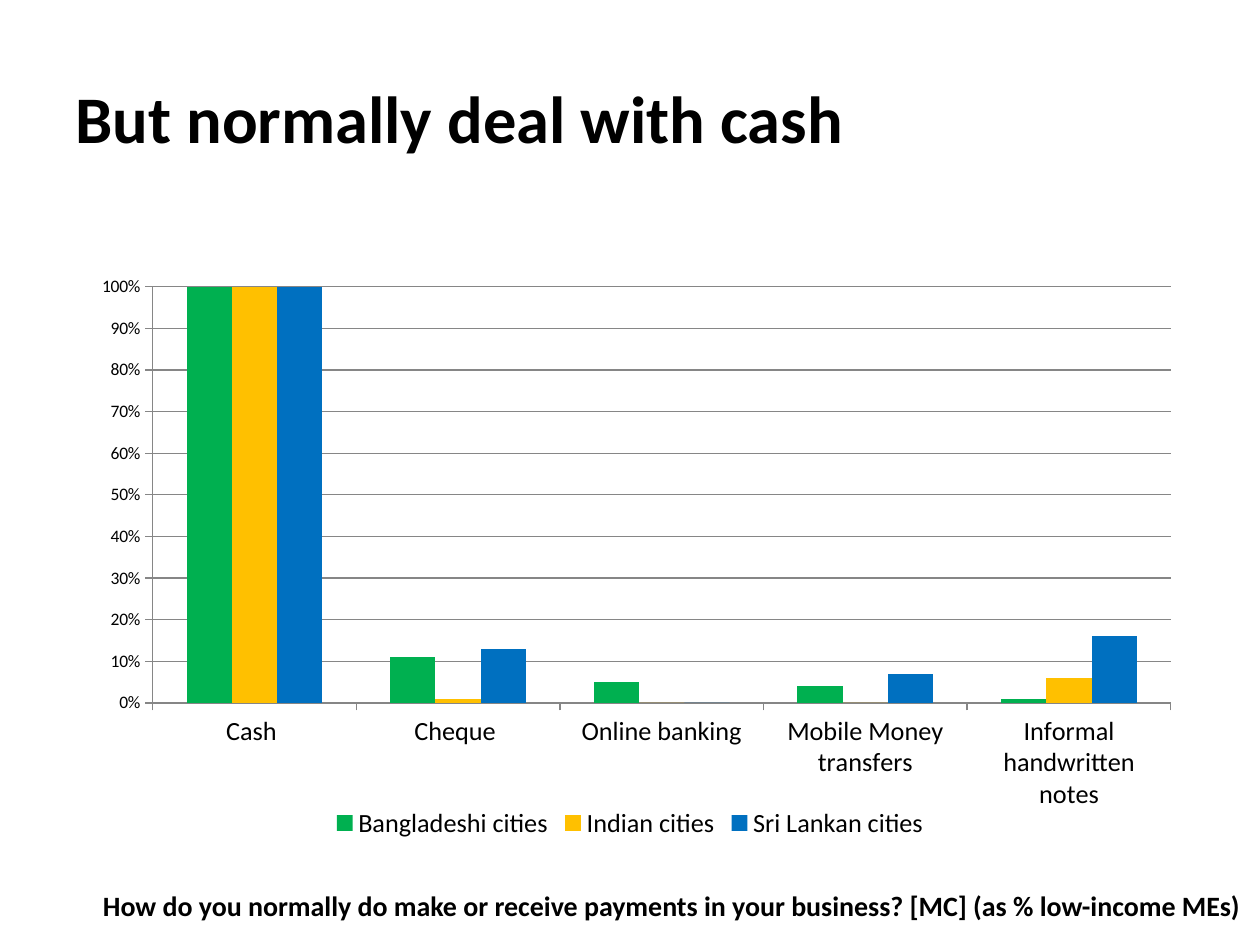
from lxml import etree
from pptx import Presentation
from pptx import util as u
from pptx.chart.data import CategoryChartData
from pptx.dml.color import RGBColor
from pptx.enum import chart as ch, text
from pptx.oxml import ns

PX = 914400 / 126
BLACK, GREY = "000000", "868686"
METHODS = ["Cash ", "Cheque ", "Online banking", "Mobile Money transfers",
           "Informal handwritten notes"]
CITIES = [
    ("Bangladeshi cities", "00B050", (1, 0.11, 0.05, 0.04, 0.01)),
    ("Indian cities", "FFC000", (1, 0.01, 0, 0, 0.06)),
    ("Sri Lankan cities", "0070C0", (1, 0.13, 0, 0.07, 0.16)),
]
PLOT = {"x": 0.079, "y": 0.107, "w": 0.898, "h": 0.667}


def px(*lengths):
    return [u.Emu(round(n * PX)) for n in lengths]


def rgb(code):
    return RGBColor.from_string(code)


class Deck:
    """Holds the style and the current slide."""

    font = "Calibri"

    def __init__(self, width, height):
        self.prs = Presentation()
        self.prs.slide_width, self.prs.slide_height = px(width, height)
        self.slide = self.prs.slides.add_slide(self.prs.slide_layouts[6])

    def style(self, font, size, bold=False):
        font.name, font.size, font.bold = self.font, u.Pt(size), bold
        font.color.rgb = rgb(BLACK)

    def label(self, box, words, size, align, anchor):
        frame = self.slide.shapes.add_textbox(*px(*box)).text_frame
        frame.word_wrap, frame.vertical_anchor = True, anchor
        line = frame.paragraphs[0]
        line.alignment = align
        run = line.add_run()
        run.text = words
        self.style(run.font, size, bold=True)

    def columns(self, box, categories, series, plot_box):
        data = CategoryChartData(number_format="0%")
        data.categories = categories
        for name, _, shares in series:
            data.add_series(name, shares)
        chart = self.slide.shapes.add_chart(
            ch.XL_CHART_TYPE.COLUMN_CLUSTERED, *px(*box), data).chart
        chart.has_title = False
        self.style(chart.font, 10)
        self.legend(chart)
        self.axes(chart)
        plot = chart.plots[0]
        plot.gap_width, plot.overlap, plot.vary_by_categories = 150, 0, False
        for bars, (_, color, _) in zip(plot.series, series):
            bars.format.fill.solid()
            bars.format.fill.fore_color.rgb = rgb(color)
        self.place_plot(chart, plot_box)

    def legend(self, chart):
        chart.has_legend = True
        chart.legend.position = ch.XL_LEGEND_POSITION.BOTTOM
        chart.legend.include_in_layout = False
        self.style(chart.legend.font, 15)

    def axes(self, chart):
        shares, methods = chart.value_axis, chart.category_axis
        shares.minimum_scale, shares.maximum_scale = 0, 1
        shares.major_unit = 0.1
        shares.has_major_gridlines = True
        shares.tick_labels.number_format = "0%"
        shares.tick_labels.number_format_is_linked = False
        for axis, size in ((shares, 10), (methods, 15)):
            axis.major_tick_mark = ch.XL_TICK_MARK.OUTSIDE
            self.style(axis.tick_labels.font, size)
        for part in (shares, methods, shares.major_gridlines):
            part.format.line.color.rgb = rgb(GREY)
            part.format.line.width = u.Pt(0.75)

    def place_plot(self, chart, plot_box):
        area = chart.plots[0]._element.getparent()
        for old in area.findall(ns.qn("c:layout")):
            area.remove(old)
        layout = etree.Element(ns.qn("c:layout"))
        area.insert(0, layout)
        manual = etree.SubElement(layout, ns.qn("c:manualLayout"))
        settings = {"layoutTarget": "inner", "xMode": "edge", "yMode": "edge", **plot_box}
        for tag, value in settings.items():
            etree.SubElement(manual, ns.qn(f"c:{tag}")).set("val", str(value))


def main():
    deck = Deck(1260, 945)
    deck.label((63, 38, 1134, 157), "But normally deal with cash", 38,
               text.PP_ALIGN.LEFT, text.MSO_ANCHOR.MIDDLE)
    deck.columns((63, 220, 1134, 624), METHODS, CITIES, PLOT)
    deck.label((63, 882, 1218, 83),
               "How do you normally do make or receive payments in your business? "
               "[MC] (as % low-income MEs)", 16,
               text.PP_ALIGN.CENTER, text.MSO_ANCHOR.TOP)
    deck.prs.save("out.pptx")


if __name__ == "__main__":
    main()
